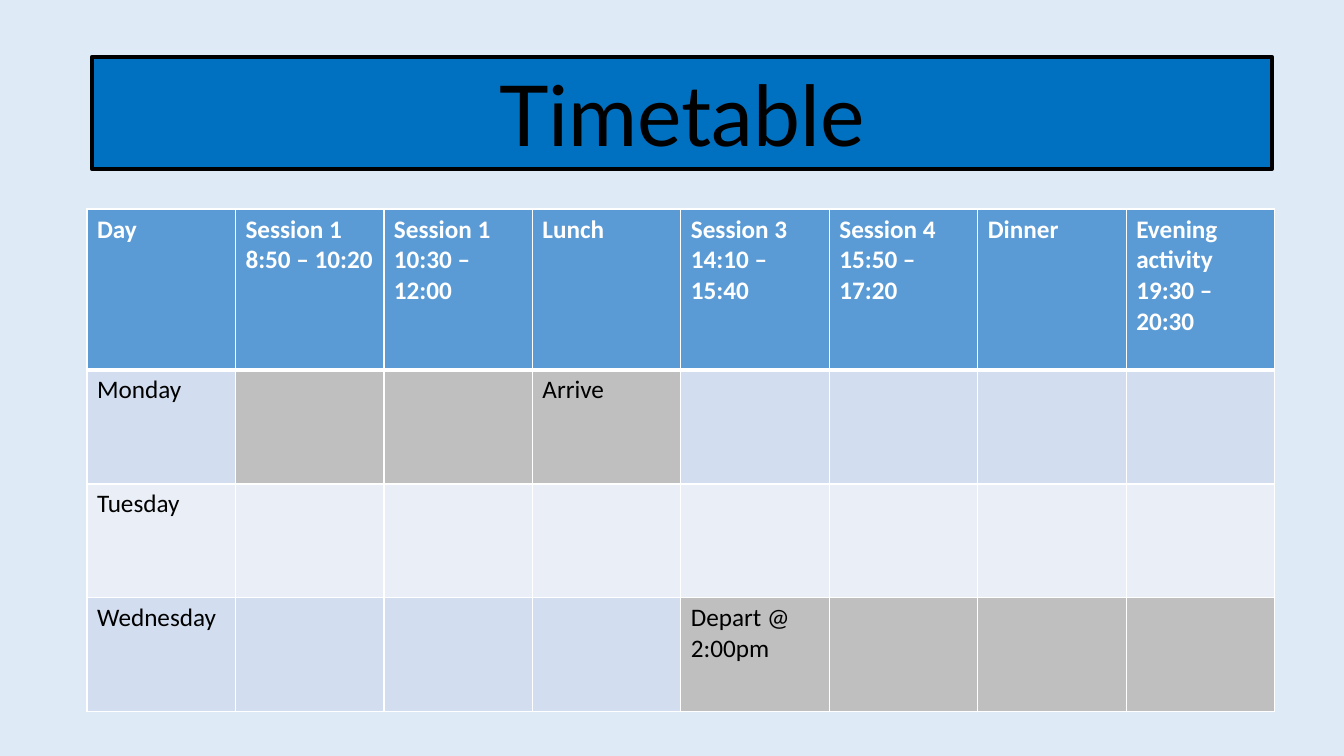
from lxml import etree
from pptx import Presentation
from pptx.dml.color import RGBColor
from pptx.enum.text import MSO_ANCHOR, PP_ALIGN
from pptx.oxml.ns import qn
from pptx.util import Pt

MIDDLE = MSO_ANCHOR.MIDDLE
CENTER = PP_ALIGN.CENTER
TITLE_ONLY = 5

COLORS = {
    "background": "DEEBF7",
    "banner": "0070C0",
    "header": "5B9BD5",
    "odd day": "D2DEEF",
    "even day": "EAEFF7",
    "unavailable": "BFBFBF",
    "black": "000000",
    "white": "FFFFFF",
}

SESSIONS = ["Day", "Session 1\n8:50 – 10:20", "Session 1\n10:30 – 12:00", "Lunch",
            "Session 3\n14:10 – 15:40", "Session 4\n15:50 – 17:20", "Dinner",
            "Evening activity 19:30 – 20:30"]
DAYS = ["Monday", "Tuesday", "Wednesday"]
EVENTS = {(1, 3): "Arrive", (3, 4): "Depart @ 2:00pm"}
UNAVAILABLE = {1: range(1, 4), 3: range(4, 8)}  # row: columns
HEADER_HEIGHT, DAY_HEIGHT = 161, 114


def px(length):
    return round(length * 914400 / 100.8)


def color(name):
    return RGBColor.from_string(COLORS[name])


prs = Presentation()
prs.slide_width, prs.slide_height = px(1344), px(756)
slide = prs.slides.add_slide(prs.slide_layouts[TITLE_ONLY])
slide.background.fill.solid()
slide.background.fill.fore_color.rgb = color("background")

# Title banner
banner = slide.shapes.title
banner.left, banner.top, banner.width, banner.height = px(92), px(57), px(1180), px(112)
banner.fill.solid()
banner.fill.fore_color.rgb = color("banner")
banner.line.color.rgb = color("black")
banner.line.width = Pt(3)
banner.text_frame.text = "Timetable"
banner.text_frame.vertical_anchor = MIDDLE
heading = banner.text_frame.paragraphs[0]
heading.alignment = CENTER
heading.line_spacing = 1.0
heading.font.name = "Lato"
heading.font.size = Pt(60)
heading.font.color.rgb = color("black")

# Timetable grid
row_count, column_count = len(DAYS) + 1, len(SESSIONS)
timetable = slide.shapes.add_table(
    row_count, column_count, px(87), px(209), px(1188),
    px(HEADER_HEIGHT + DAY_HEIGHT * len(DAYS))).table
for column in timetable.columns:
    column.width = px(1188) // column_count

for r, row in enumerate(timetable.rows):
    row.height = px(DAY_HEIGHT if r else HEADER_HEIGHT)
    for c, cell in enumerate(row.cells):
        # Wording and fill
        if r == 0:
            wording, fill = SESSIONS[c], "header"
        else:
            wording = EVENTS.get((r, c), "") if c else DAYS[r - 1]
            fill = "odd day" if r % 2 else "even day"
        if c in UNAVAILABLE.get(r, ()):
            fill = "unavailable"
        cell.text = wording
        for paragraph in cell.text_frame.paragraphs:
            paragraph.font.name = "Calibri"
            paragraph.font.size = Pt(18)
            paragraph.font.bold = r == 0
            paragraph.font.color.rgb = color("black" if r else "white")

        # White borders, thicker below the header
        properties = cell._tc.get_or_add_tcPr()
        for side in ("lnL", "lnR", "lnT", "lnB"):
            below_header = (r, side) in ((0, "lnB"), (1, "lnT"))
            border = etree.SubElement(properties, qn(f"a:{side}"),
                                      w=str(Pt(3 if below_header else 1)))
            solid = etree.SubElement(border, qn("a:solidFill"))
            etree.SubElement(solid, qn("a:srgbClr"), val=COLORS["white"])
        cell.fill.solid()
        cell.fill.fore_color.rgb = color(fill)

prs.save("out.pptx")
